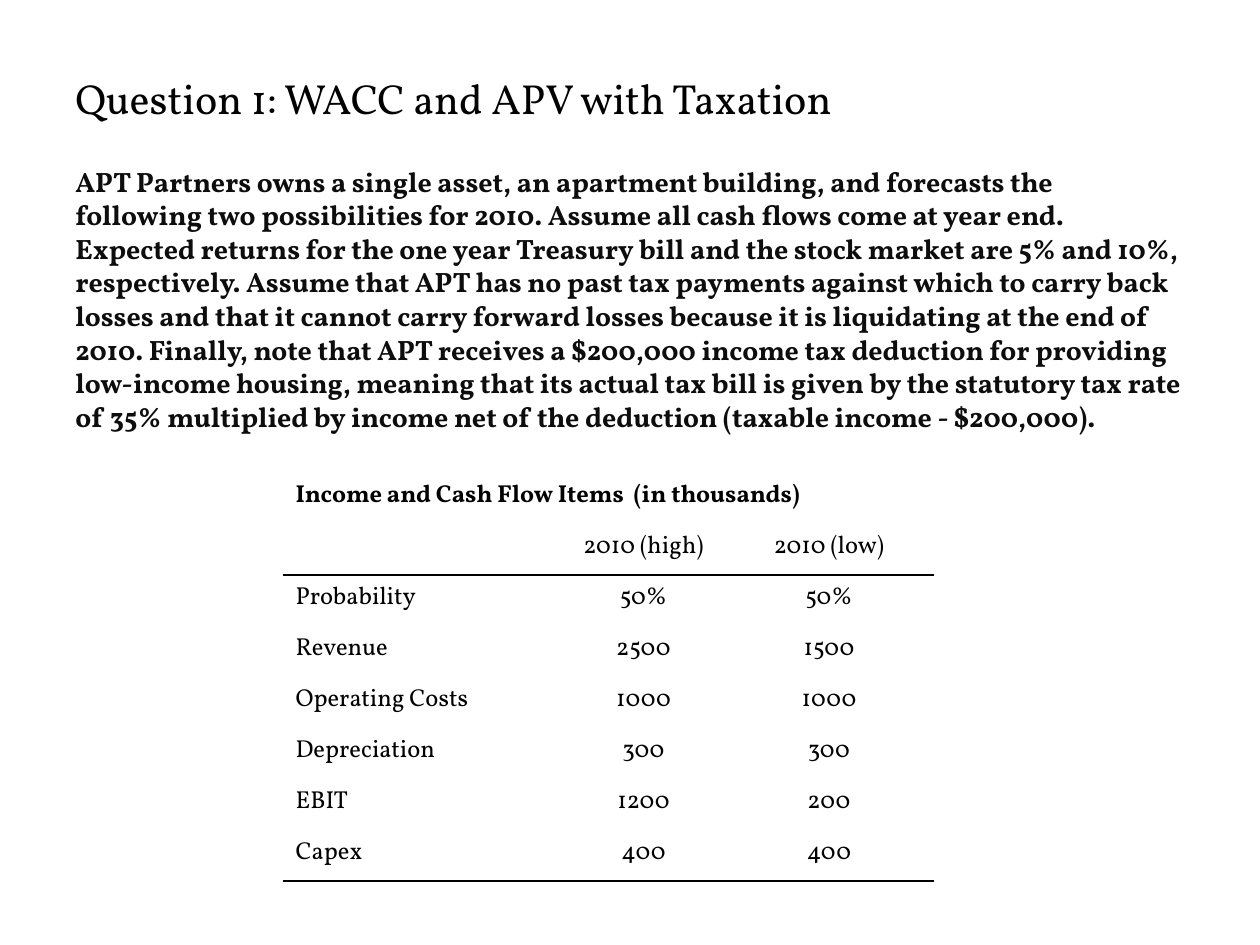
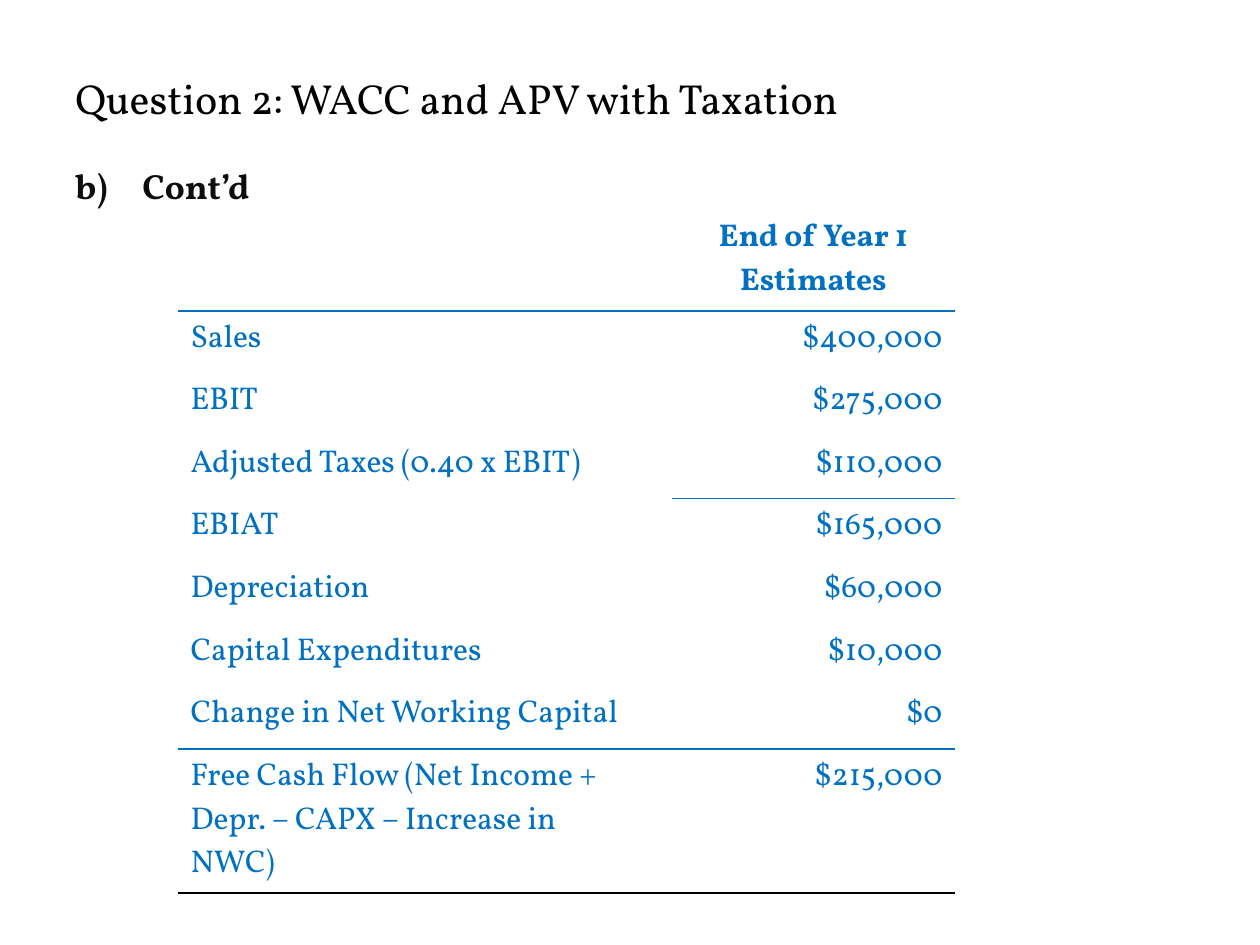
from dataclasses import dataclass

from lxml.etree import SubElement
from pptx import Presentation
from pptx.dml.color import RGBColor
from pptx.enum.text import MSO_VERTICAL_ANCHOR as Anchor, PP_PARAGRAPH_ALIGNMENT as Align
from pptx.oxml.ns import qn
from pptx.util import Emu, Pt

PX_PER_INCH = 126
NO_STYLE = "{2D5ABB26-0587-4C30-8999-92F81FD0307C}"


@dataclass(frozen=True)
class Theme:
    font: str = "Vollkorn"
    black: str = "000000"
    body: str = "0D0D0D"
    blue: str = "0070C0"
    title_size: int = 24
    question_size: int = 16
    heading_size: int = 20
    items_size: int = 14
    estimates_size: int = 18
    rule_width: int = 1
    space_before: float = 0.2


THEME = Theme()

QUESTION = (
    "APT Partners owns a single asset, an apartment building, and forecasts the "
    "following two possibilities for 2010. Assume all cash flows come at year end. "
    "Expected returns for the one year Treasury bill and the stock market are 5% and "
    "10%, respectively. Assume that APT has no past tax payments against which to "
    "carry back losses and that it cannot carry forward losses because it is "
    "liquidating at the end of 2010. Finally, note that APT receives a $200,000 "
    "income tax deduction for providing low-income housing, meaning that its actual "
    "tax bill is given by the statutory tax rate of 35% multiplied by income net of "
    "the deduction (taxable income - $200,000)."
)

INCOME_ITEMS = [
    ("Income and Cash Flow Items  (in thousands)", "", ""),
    ("", "2010 (high)", "2010 (low)"),
    ("Probability", "50%", "50%"),
    ("Revenue", "2500", "1500"),
    ("Operating Costs", "1000", "1000"),
    ("Depreciation", "300", "300"),
    ("EBIT", "1200", "200"),
    ("Capex", "400", "400"),
]

ESTIMATES = [
    ("", "End of Year 1\nEstimates"),
    ("Sales", "$400,000"),
    ("EBIT", "$275,000"),
    ("Adjusted Taxes (0.40 x EBIT)", "$110,000"),
    ("EBIAT", "$165,000"),
    ("Depreciation", "$60,000"),
    ("Capital Expenditures", "$10,000"),
    ("Change in Net Working Capital", "$0"),
    ("Free Cash Flow (Net Income +\nDepr. – CAPX – Increase in\nNWC)", "$215,000"),
]


def px(length):
    return Emu(round(length * 914400 / PX_PER_INCH))


def set_attributes(target, formats):
    for name, value in formats.items():
        setattr(target, name, value)


def write_text(frame, text, size, color, bold=False, **paragraph_formats):
    """Fill the frame with one paragraph per line of text."""
    if not text:
        return
    for index, line in enumerate(text.split("\n")):
        paragraph = frame.add_paragraph() if index else frame.paragraphs[0]
        set_attributes(paragraph, paragraph_formats)
        run = paragraph.add_run()
        run.text = line
        set_attributes(run.font, {"name": THEME.font, "size": Pt(size), "bold": bold})
        run.font.color.rgb = RGBColor.from_string(color)


def add_text(slide, box, text, size, color, anchor=Anchor.TOP, **formats):
    frame = slide.shapes.add_textbox(*map(px, box)).text_frame
    set_attributes(frame, {"word_wrap": True, "vertical_anchor": anchor})
    write_text(frame, text, size, color, **formats)
    return frame


def add_title(slide, text):
    add_text(slide, (63, 38, 1134, 120), text, THEME.title_size, THEME.black,
             anchor=Anchor.MIDDLE)


def add_body(slide, text, size):
    return add_text(slide, (63, 158, 1134, 724), text, size, THEME.body, bold=True,
                    space_before=Pt(size * THEME.space_before))


def hang_indent(paragraph, indent):
    """Line up the text after a tab with a hanging indent."""
    properties = paragraph._p.get_or_add_pPr()
    properties.set("marL", str(px(indent)))
    properties.set("indent", str(-px(indent)))
    tabs = SubElement(properties, qn("a:tabLst"))
    SubElement(tabs, qn("a:tab"), pos=str(px(indent)), algn="l")


def clear_borders(cell):
    """Give all four edges of an unfilled cell an explicit empty line."""
    properties = cell._tc.get_or_add_tcPr()
    for edge in "LRTB":
        line = SubElement(properties, qn(f"a:ln{edge}"), w=str(Pt(THEME.rule_width)))
        SubElement(line, qn("a:noFill"))


def color_border(cell, edge, color):
    line = cell._tc.tcPr.find(qn(f"a:ln{edge}"))
    line.remove(line[0])
    fill = SubElement(line, qn("a:solidFill"))
    SubElement(fill, qn("a:srgbClr"), val=color)


def rule_below(table, row, color, first_column=0):
    """Rule a line under a row, shared with the top edge of the next row."""
    for column in range(first_column, len(table.columns)):
        color_border(table.cell(row, column), "B", color)
        if row + 1 < len(table.rows):
            color_border(table.cell(row + 1, column), "T", color)


def add_table(slide, origin, widths, heights, rows, size, color, number_align,
              header_rows=1):
    """Add an unstyled table with a bold first row and centred column heads."""
    left, top = map(px, origin)
    frame = slide.shapes.add_table(len(rows), len(widths), left, top,
                                   px(sum(widths)), sum(heights))
    table = frame.table
    set_attributes(table, {"first_row": False, "horz_banding": False})
    table._tbl.tblPr.find(qn("a:tableStyleId")).text = NO_STYLE
    for column, width in zip(table.columns, widths):
        column.width = px(width)
    for row, height in zip(table.rows, heights):
        row.height = height
    for row_index, values in enumerate(rows):
        heads = row_index < header_rows
        for column_index, text in enumerate(values):
            cell = table.cell(row_index, column_index)
            clear_borders(cell)
            cell.fill.background()
            value_align = Align.CENTER if heads else number_align
            write_text(cell.text_frame, text, size, color, bold=row_index == 0,
                       alignment=value_align if column_index else Align.LEFT)
    return table


def build_question(slide):
    add_title(slide, "Question 1: WACC and APV with Taxation")
    add_body(slide, QUESTION, THEME.question_size)
    table = add_table(slide, (283, 473), (280, 161, 210),
                      [px(51)] * len(INCOME_ITEMS), INCOME_ITEMS,
                      THEME.items_size, THEME.black, Align.CENTER, header_rows=2)
    table.cell(0, 0).merge(table.cell(0, 2))
    for row in (1, len(INCOME_ITEMS) - 1):
        rule_below(table, row, THEME.black)


def build_estimates(slide):
    add_title(slide, "Question 2: WACC and APV with Taxation")
    body = add_body(slide, "b)\tCont’d", THEME.heading_size)
    hang_indent(body.paragraphs[0], 67)
    item_count = len(ESTIMATES) - 2
    heights = [px(101), *[Emu(px(438) // item_count)] * item_count, px(144)]
    table = add_table(slide, (178, 210), (494, 283), heights, ESTIMATES,
                      THEME.estimates_size, THEME.blue, Align.RIGHT)
    last_row = len(ESTIMATES) - 1
    rule_below(table, 0, THEME.blue)
    rule_below(table, 3, THEME.blue, first_column=1)
    rule_below(table, last_row - 1, THEME.blue)
    rule_below(table, last_row, THEME.black)


def main():
    presentation = Presentation()
    set_attributes(presentation, {"slide_width": px(1260), "slide_height": px(945)})
    blank = presentation.slide_layouts[6]
    for build in (build_question, build_estimates):
        build(presentation.slides.add_slide(blank))
    presentation.save("out.pptx")


if __name__ == "__main__":
    main()
